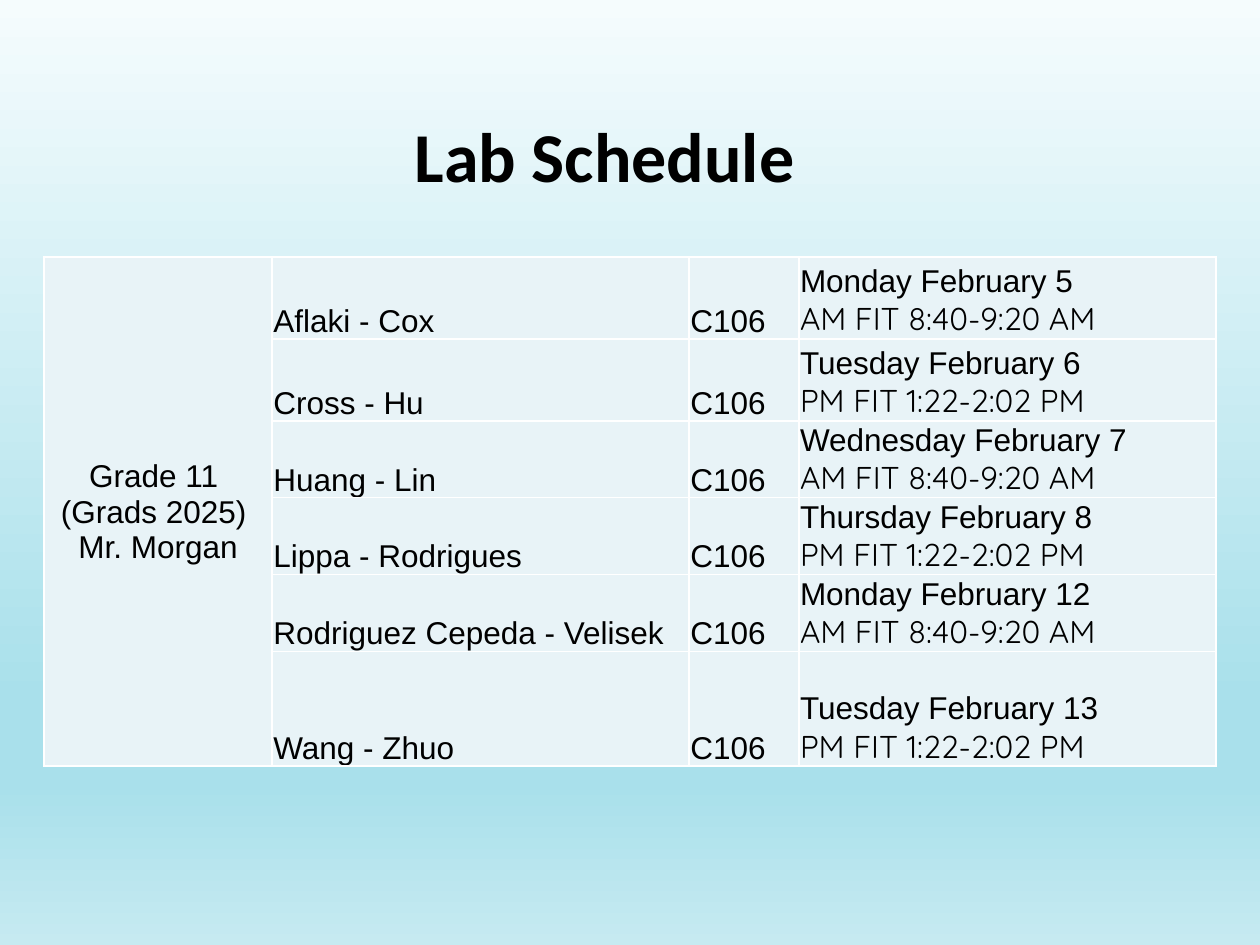
import copy

import pptx
import pptx.dml.color
import pptx.enum.text
import pptx.util
from pptx.util import Inches

ANCHOR = pptx.enum.text.MSO_ANCHOR


def rgb(value):
    return pptx.dml.color.RGBColor.from_string(value)


def fill_cell(cell, lines, anchor, align):
    """Write (text, font) lines into a cell and format it."""
    cell.fill.solid()
    cell.fill.fore_color.rgb = rgb("E8F3F7")
    cell.vertical_anchor = anchor
    cell.margin_left = cell.margin_top = cell.margin_right = Inches(0.01)
    cell.margin_bottom = 0
    cell.text = "\n".join(text for text, font in lines)
    for paragraph, (text, font) in zip(cell.text_frame.paragraphs, lines):
        paragraph.alignment = align
        paragraph.font.name = font
        paragraph.font.size = pptx.util.Pt(18)
        paragraph.font.color.rgb = rgb("000000")


presentation = pptx.Presentation()
presentation.slide_width = Inches(10)
presentation.slide_height = Inches(7.5)
slide = presentation.slides.add_slide(presentation.slide_layouts[5])

# Background gradient, from top to bottom
background = slide.background.fill
background.gradient()
background.gradient_angle = 270
first_stop = background.gradient_stops[0]._gs
stop_list = first_stop.getparent()
for _ in range(2):
    stop_list.append(copy.deepcopy(first_stop))
shades = [(0, "F5FCFD"), (0.74, "A9E0EB"), (0.83, "A9E0EB"), (1, "C6EAF1")]
for stop, (position, color) in zip(background.gradient_stops, shades):
    stop.position = position
    stop.color.rgb = rgb(color)

title = slide.shapes.title
title.left, title.top = Inches(3.19), Inches(0.84)
title.width, title.height = Inches(3.43), Inches(0.77)
title.text = "Lab Schedule"
title.text_frame.word_wrap = False
title.text_frame.auto_size = pptx.enum.text.MSO_AUTO_SIZE.NONE
title.text_frame.vertical_anchor = ANCHOR.TOP
heading = title.text_frame.paragraphs[0]
heading.alignment = pptx.enum.text.PP_ALIGN.LEFT
heading.font.name = "Calibri"
heading.font.size = pptx.util.Pt(40)
heading.font.bold = True
heading.font.color.rgb = rgb("000000")

# Sessions alternate between morning and afternoon
room = "C106"
times = ["AM FIT 8:40-9:20 AM", "PM FIT 1:22-2:02 PM"]
sessions = [
    ("Aflaki - Cox", "Monday February 5", 0.65),
    ("Cross - Hu", "Tuesday February 6", 0.65),
    ("Huang - Lin", "Wednesday February 7", 0.61),
    ("Lippa - Rodrigues", "Thursday February 8", 0.61),
    ("Rodriguez Cepeda - Velisek", "Monday February 12", 0.61),
    ("Wang - Zhuo", "Tuesday February 13", 0.91),
]
schedule = slide.shapes.add_table(
    len(sessions), 4, Inches(0.35), Inches(2.04), Inches(9.3), Inches(4.04)
).table
schedule.first_row = False
schedule.horz_banding = False
for column, width in zip(schedule.columns, [1.81, 3.31, 0.87, 3.31]):
    column.width = Inches(width)

grade = schedule.cell(0, 0)
grade.merge(schedule.cell(len(sessions) - 1, 0))
fill_cell(grade, [("Grade 11 ", "Arial"), ("(Grads 2025) \vMr. Morgan", "Arial")],
          ANCHOR.MIDDLE, pptx.enum.text.PP_ALIGN.CENTER)

for index, (students, day, height) in enumerate(sessions):
    schedule.rows[index].height = Inches(height)
    entries = [
        [(students, "Arial")],
        [(room, "Arial")],
        [(day, "Arial"), (times[index % 2], "Quicksand")],
    ]
    for column, lines in enumerate(entries, start=1):
        fill_cell(schedule.cell(index, column), lines,
                  ANCHOR.BOTTOM, pptx.enum.text.PP_ALIGN.LEFT)

presentation.save("out.pptx")
